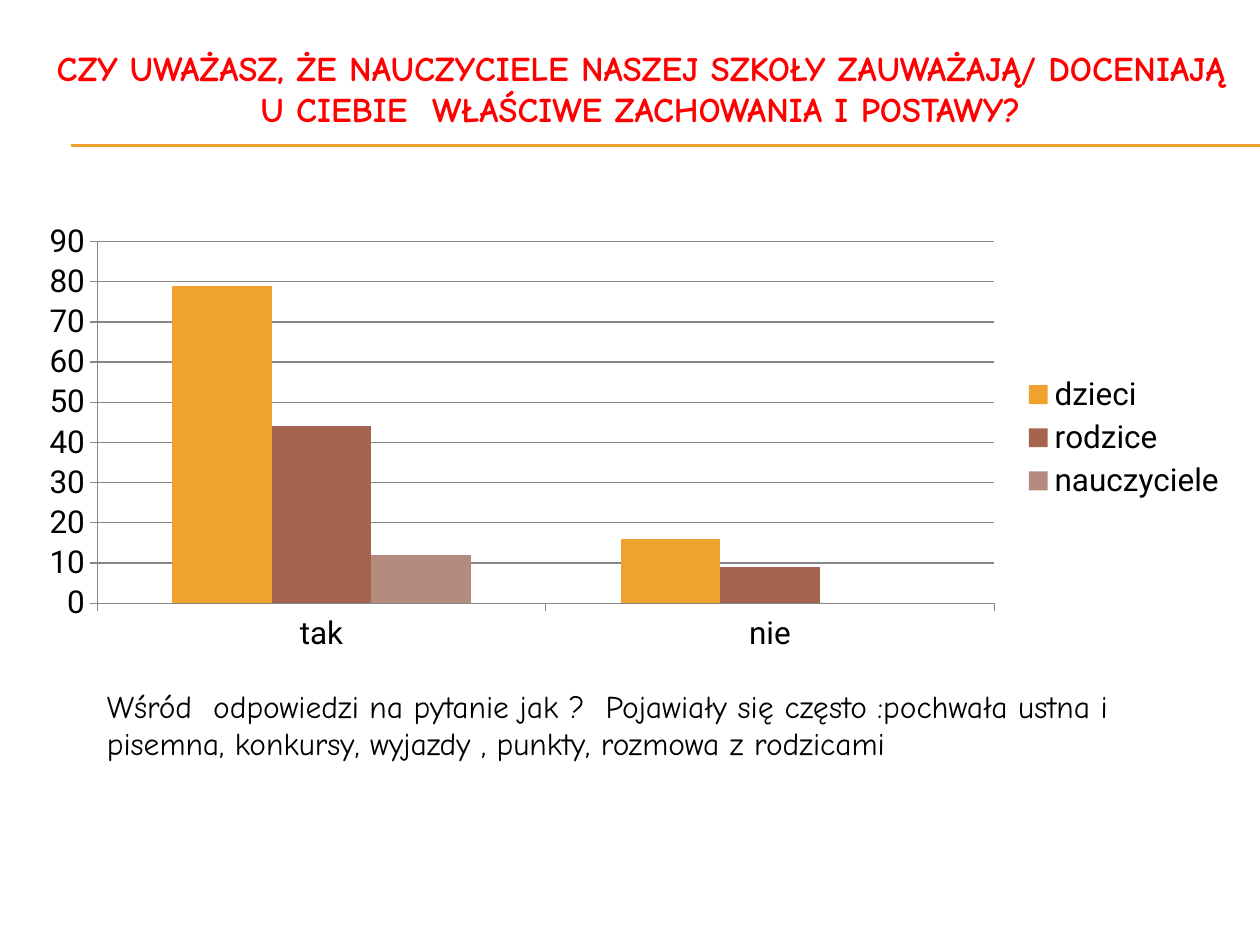
import pptx
import pptx.chart.data
import pptx.dml.color
import pptx.enum.chart
import pptx.enum.shapes
import pptx.enum.text
import pptx.oxml.ns
import pptx.util
from lxml import etree

Pt = pptx.util.Pt
COLORS = {"title": "FF0000", "text": "000000", "rule": "F0A22E", "axis": "868686",
          "dzieci": "F0A22E", "rodzice": "A5644E", "nauczyciele": "B58B80"}
SERIES = {"dzieci": (79, 16), "rodzice": (44, 9), "nauczyciele": (12, 0)}


def color(name):
    return pptx.dml.color.RGBColor.from_string(COLORS[name])


def apply_format(target, values):
    for name, value in values.items():
        setattr(target, name, value)


def points(box):
    return [Pt(length) for length in box]


def write_text(shape, text, color_name, frame_format, font_format, alignment):
    frame = shape.text_frame
    apply_format(frame, {"word_wrap": True, **frame_format})
    paragraph = frame.paragraphs[0]
    paragraph.alignment = alignment
    run = paragraph.add_run()
    run.text = text
    apply_format(run.font, {"name": "Comic Neue", **font_format})
    run.font.color.rgb = color(color_name)


def add_title(slide, box):
    title = slide.shapes.title
    apply_format(title, dict(zip(("left", "top", "width", "height"), points(box))))
    # The deep bottom inset lifts the two lines above the rule
    write_text(title,
               "CZY UWAŻASZ, ŻE NAUCZYCIELE NASZEJ SZKOŁY ZAUWAŻAJĄ/ DOCENIAJĄ "
               "U CIEBIE  WŁAŚCIWE ZACHOWANIA I POSTAWY?",
               "title",
               {"vertical_anchor": pptx.enum.text.MSO_ANCHOR.MIDDLE,
                "auto_size": pptx.enum.text.MSO_AUTO_SIZE.NONE,
                "margin_bottom": Pt(41)},
               {"size": Pt(19.8), "bold": True}, pptx.enum.text.PP_ALIGN.CENTER)


def add_rule(slide, left, right, top):
    for y in (top, top + 0.6):
        line = slide.shapes.add_connector(
            pptx.enum.shapes.MSO_CONNECTOR.STRAIGHT, *points((left, y, right, y)))
        line.line.color.rgb = color("rule")
        line.line.width = Pt(0.75)
        etree.SubElement(line._element.spPr, pptx.oxml.ns.qn("a:effectLst"))


def add_answer_chart(slide, box):
    data = pptx.chart.data.CategoryChartData()
    data.categories = ["tak", "nie"]
    for name, values in SERIES.items():
        data.add_series(name, values)
    chart = slide.shapes.add_chart(
        pptx.enum.chart.XL_CHART_TYPE.COLUMN_CLUSTERED, *points(box), data).chart
    apply_format(chart, {"has_title": False, "has_legend": True})
    apply_format(chart.font, {"name": "Roboto", "size": Pt(18)})
    chart.font.color.rgb = color("text")
    apply_format(chart.legend, {"position": pptx.enum.chart.XL_LEGEND_POSITION.RIGHT,
                                "include_in_layout": False})

    # Columns
    plot = chart.plots[0]
    apply_format(plot, {"gap_width": 150, "overlap": 0, "vary_by_categories": False})
    for series in plot.series:
        series.format.fill.solid()
        series.format.fill.fore_color.rgb = color(series.name)

    # Axes and gridlines
    value_axis = chart.value_axis
    apply_format(value_axis, {"minimum_scale": 0, "maximum_scale": 90, "major_unit": 10,
                              "has_major_gridlines": True})
    for part in (chart.category_axis, value_axis, value_axis.major_gridlines):
        part.format.line.color.rgb = color("axis")
        part.format.line.width = Pt(0.75)


def add_comment(slide, box):
    write_text(slide.shapes.add_textbox(*points(box)),
               "Wśród  odpowiedzi na pytanie jak ?  Pojawiały się często :pochwała ustna i "
               "pisemna, konkursy, wyjazdy , punkty, rozmowa z rodzicami",
               "text", {"auto_size": pptx.enum.text.MSO_AUTO_SIZE.SHAPE_TO_FIT_TEXT},
               {"size": Pt(18)}, pptx.enum.text.PP_ALIGN.LEFT)


def main():
    presentation = pptx.Presentation()
    apply_format(presentation, {"slide_width": Pt(720), "slide_height": Pt(540)})
    slide = presentation.slides.add_slide(presentation.slide_layouts.get_by_name("Title Only"))
    add_rule(slide, 40.5, 720, 82.8)
    add_title(slide, (24, 36, 684, 66))
    add_answer_chart(slide, (14.4, 122.4, 694, 255.6))
    add_comment(slide, (54, 388.8, 601, 51))
    presentation.save("out.pptx")


if __name__ == "__main__":
    main()
